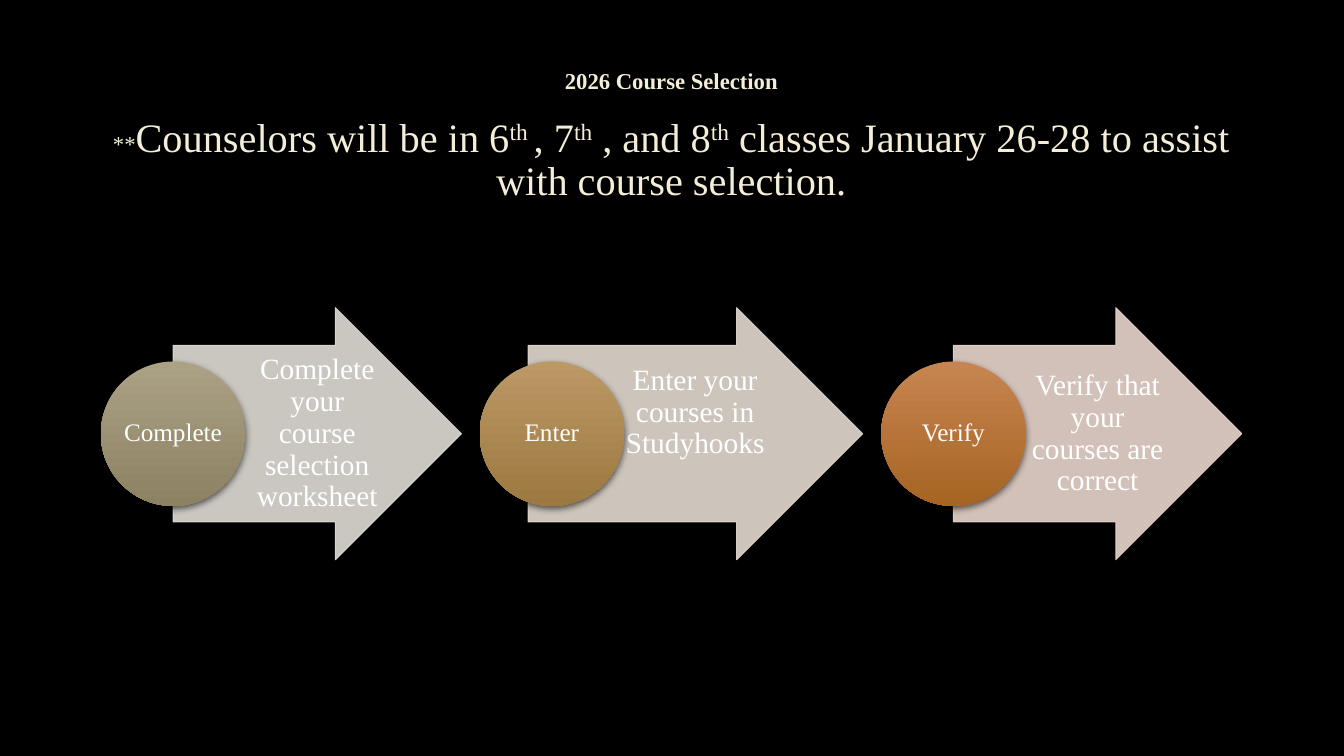
from pptx import Presentation
from pptx.dml.color import RGBColor
from pptx.enum.shapes import MSO_SHAPE
from pptx.enum.text import MSO_ANCHOR, PP_ALIGN
from pptx.oxml import parse_xml
from pptx.oxml.ns import nsdecls, qn
from pptx.util import Pt

ARROW, OVAL = MSO_SHAPE.RIGHT_ARROW, MSO_SHAPE.OVAL
MIDDLE, CENTER = MSO_ANCHOR.MIDDLE, PP_ALIGN.CENTER

FONT = "Times New Roman"
BLACK, WHITE, CREAM = "000000", "FFFFFF", "F4EDD8"
CENTER_Y = 309.8
ARROW_HEIGHT, SHAFT_HEIGHT, CIRCLE_SIZE = 180, 126, 103.2
MARGIN = 72

TITLE = [
    [("2026 Course Selection", {"size": 16.2, "bold": True})],
    [
        ("**", {"size": 16.2}),
        ("Counselors will be in 6", {}),
        ("th ", {"raised": True}),
        (", 7", {}),
        ("th", {"raised": True}),
        (" , and 8", {}),
        ("th", {"raised": True}),
        (" classes January 26-28 to assist with course selection.", {}),
    ],
]

# label, text, circle left, arrow left, arrow width, arrow colour, circle colours, room below text
STEPS = [
    ("Complete", "Complete your course selection worksheet",
     72, 123.6, 206, "E0DDD6", ("ABA185", "8C8162"), 0),
    ("Enter", "Enter your courses in Studyhooks",
     342.6, 377.2, 239, "E4DBD1", ("BC9864", "9C7940"), 30),
    ("Verify", "Verify that your courses are correct",
     629.4, 681, 206, "E9D6CD", ("C78450", "A66523"), 0),
]


def color(value):
    return RGBColor.from_string(value)


def apply(target, values):
    for name, value in values.items():
        setattr(target, name, value)


class SlideBuilder:
    def __init__(self, page):
        self.page = page

    def background(self, fill):
        self.page.background.fill.solid()
        self.page.background.fill.fore_color.rgb = color(fill)

    def add_spans(self, shape, paragraphs, size, ink, insets, gap=0):
        """Fill a shape with paragraphs, each a list of (text, format) spans."""
        frame = shape.text_frame
        left, top, right, bottom = map(Pt, insets)
        apply(frame, {"word_wrap": True, "vertical_anchor": MIDDLE,
                      "margin_left": left, "margin_top": top,
                      "margin_right": right, "margin_bottom": bottom})
        for index, spans in enumerate(paragraphs):
            para = frame.add_paragraph() if index else frame.paragraphs[0]
            apply(para, {"alignment": CENTER, "line_spacing": 0.9})
            if index:
                para.space_before = Pt(gap)
            for text, style in spans:
                span = para.add_run()
                span.text = text
                apply(span.font, {"name": FONT, "size": Pt(style.get("size", size)),
                                  "bold": style.get("bold", False)})
                span.font.color.rgb = color(ink)
                if style.get("raised"):
                    span._r.get_or_add_rPr().set("baseline", "30000")

    def text(self, at, paragraphs, size, ink, insets, gap=0):
        box = self.page.shapes.add_textbox(*map(Pt, at))
        self.add_spans(box, paragraphs, size, ink, insets, gap)

    def arrow(self, at, fill):
        shape = self.page.shapes.add_shape(ARROW, *map(Pt, at))
        shape.shadow.inherit = False
        shape.adjustments[0] = SHAFT_HEIGHT / ARROW_HEIGHT
        shape.fill.solid()
        shape.fill.fore_color.rgb = color(fill)
        shape.line.color.rgb = color(fill)
        shape.line.width = Pt(0.75)
        for tint in shape._element.spPr.iter(qn("a:srgbClr")):
            tint.append(parse_xml(f'<a:alpha {nsdecls("a")} val="90000"/>'))

    def circle(self, at, shades, label):
        shape = self.page.shapes.add_shape(OVAL, *map(Pt, at))
        shape.shadow.inherit = False
        shape.fill.gradient()
        shape.fill.gradient_angle = 270
        for stop, shade, position in zip(shape.fill.gradient_stops, shades, (0, 1)):
            stop.color.rgb = color(shade)
            stop.position = position
        shape.line.fill.background()
        shape._element.spPr.find(qn("a:effectLst")).append(parse_xml(
            f'<a:outerShdw {nsdecls("a")} blurRad="{Pt(5)}" dist="{Pt(2)}" dir="5400000" '
            f'rotWithShape="0"><a:srgbClr val="{BLACK}"><a:alpha val="60000"/>'
            '</a:srgbClr></a:outerShdw>'))
        self.add_spans(shape, [[(label, {})]], 18, WHITE, (0.8, 0.8, 0.8, 0.8))

    def step(self, label, text, circle_left, arrow_left, width, fill, shades, room):
        self.arrow((arrow_left, CENTER_Y - ARROW_HEIGHT / 2, width, ARROW_HEIGHT), fill)
        self.text((arrow_left + width / 4, CENTER_Y - SHAFT_HEIGHT / 2,
                   width * 0.49, SHAFT_HEIGHT),
                  [[(text, {})]], 21, WHITE, (4.3, 0.8, 2.2, 0.8 + room))
        self.circle((circle_left, CENTER_Y - CIRCLE_SIZE / 2, CIRCLE_SIZE, CIRCLE_SIZE),
                    shades, label)


def main():
    deck = Presentation()
    deck.slide_width, deck.slide_height = Pt(960), Pt(540)
    builder = SlideBuilder(deck.slides.add_slide(deck.slide_layouts[6]))
    builder.background(BLACK)
    builder.text((MARGIN, 48.2, 960 - 2 * MARGIN - 1, 99.4), TITLE, 28.8, CREAM,
                 (7.2, 3.6, 7.2, 3.6), gap=16.8)
    for step in STEPS:
        builder.step(*step)
    deck.save("out.pptx")


if __name__ == "__main__":
    main()
